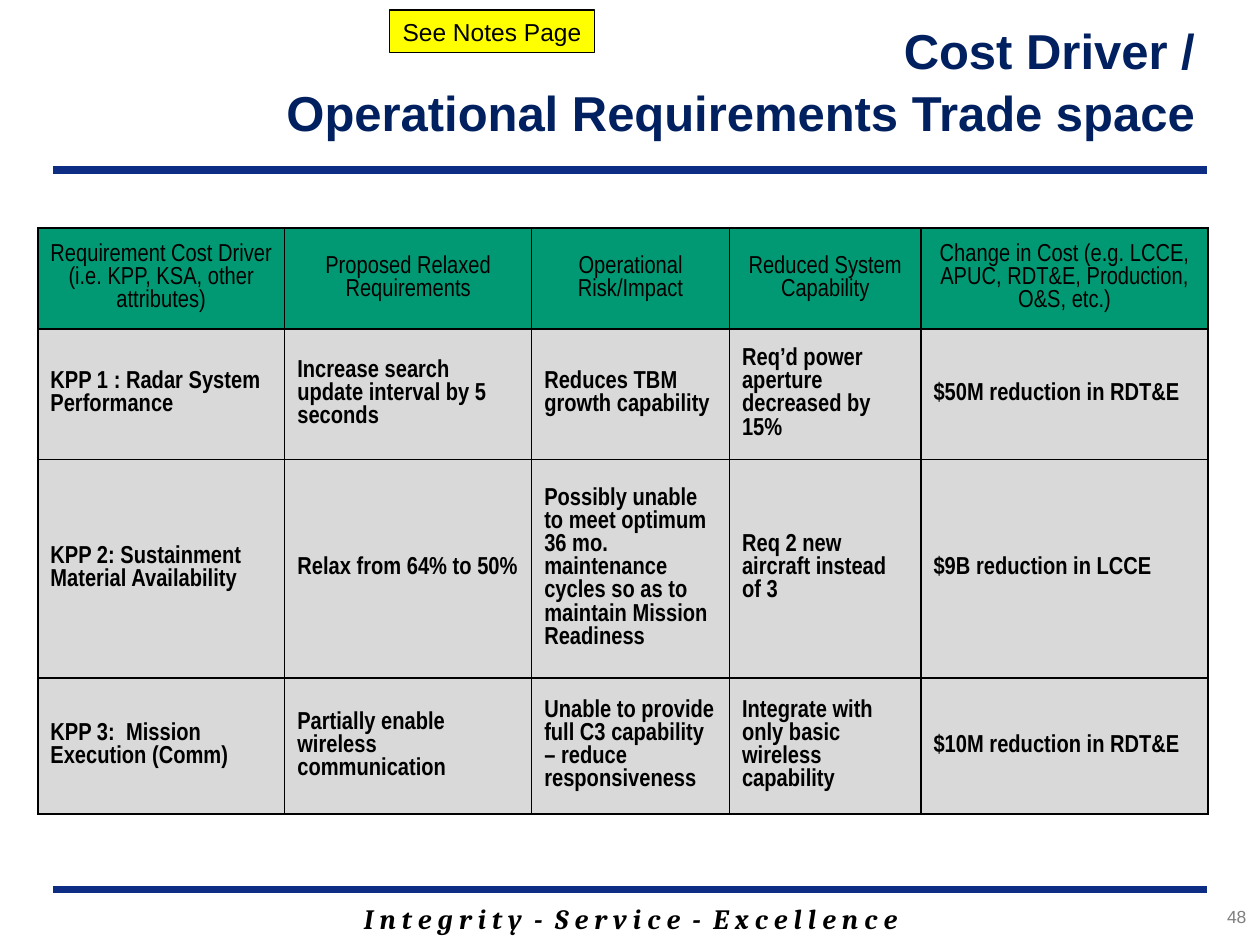
import pptx
import pptx.util
import pptx.dml.color
import pptx.enum.shapes
import pptx.enum.text
import pptx.oxml
import pptx.oxml.ns
from dataclasses import dataclass

Inches = pptx.util.Inches
Pt = pptx.util.Pt
Align = pptx.enum.text.PP_ALIGN
Anchor = pptx.enum.text.MSO_ANCHOR


@dataclass(frozen=True)
class Theme:
    black: str = "000000"
    title: str = "002060"
    rule: str = "0C2D83"
    header: str = "009973"
    body: str = "D9D9D9"
    note: str = "FFFF00"
    number: str = "7F7F7F"
    font: str = "Arial"
    table_font: str = "Arial Narrow"
    motto_font: str = "Cambria"
    title_size: int = 28
    motto_size: int = 16
    text_size: int = 14
    number_size: int = 10


THEME = Theme()

COLUMN_WIDTHS = [1.96, 1.96, 1.57, 1.52, 2.28]
ROW_HEIGHTS = [0.8, 1.03, 1.73, 1.08]
ROWS = [
    ["Requirement Cost Driver (i.e. KPP, KSA, other attributes)",
     "Proposed Relaxed Requirements",
     "Operational Risk/Impact",
     "Reduced System Capability",
     "Change in Cost (e.g. LCCE, APUC, RDT&E, Production, O&S, etc.)"],
    ["KPP 1 : Radar System Performance",
     "Increase search update interval by 5 seconds",
     "Reduces TBM growth capability",
     "Req’d power aperture decreased by 15%",
     "$50M reduction in RDT&E"],
    ["KPP 2: Sustainment Material Availability",
     "Relax from 64% to 50%",
     "Possibly unable to meet optimum 36 mo. maintenance cycles so as to maintain Mission Readiness",
     "Req 2 new aircraft instead of 3",
     "$9B reduction in LCCE"],
    ["KPP 3:  Mission Execution (Comm)",
     "Partially enable wireless communication",
     "Unable to provide full C3 capability – reduce responsiveness",
     "Integrate with only basic wireless capability",
     "$10M reduction in RDT&E"],
]


def rgb(color):
    return pptx.dml.color.RGBColor.from_string(color)


def fill_solid(target, color):
    target.fill.solid()
    target.fill.fore_color.rgb = rgb(color)


def write(frame, lines, size, color=THEME.black, font=THEME.font, align=Align.LEFT,
          bold=False, italic=False, spacing=None):
    frame.text = "\n".join(lines)
    for paragraph in frame.paragraphs:
        paragraph.alignment = align
        paragraph.line_spacing = spacing
        paragraph.font.name = font
        paragraph.font.size = Pt(size)
        paragraph.font.bold = bold
        paragraph.font.italic = italic
        paragraph.font.color.rgb = rgb(color)


def add_text(slide, left, top, width, height, lines, size, anchor=Anchor.TOP, **style):
    box = slide.shapes.add_textbox(Inches(left), Inches(top), Inches(width), Inches(height))
    box.text_frame.word_wrap = True
    box.text_frame.vertical_anchor = anchor
    write(box.text_frame, lines, size, **style)


def add_rule(slide, top):
    rule = slide.shapes.add_connector(
        pptx.enum.shapes.MSO_CONNECTOR.STRAIGHT,
        Inches(0.42), Inches(top), Inches(9.58), Inches(top))
    rule.line.color.rgb = rgb(THEME.rule)
    rule.line.width = Pt(4.5)
    pptx.oxml.ns.qn("a:effectLst")
    rule._element.spPr.append(pptx.oxml.parse_xml(
        f"<a:effectLst {pptx.oxml.ns.nsdecls('a')}/>"))


def add_borders(cell):
    properties = cell._tc.get_or_add_tcPr()
    for position, side in enumerate(("lnL", "lnR", "lnT", "lnB")):
        properties.insert(position, pptx.oxml.parse_xml(
            f"<a:{side} {pptx.oxml.ns.nsdecls('a')} w='{Pt(1)}'>"
            f"<a:solidFill><a:srgbClr val='{THEME.black}'/></a:solidFill></a:{side}>"))


def add_trade_table(slide):
    table = slide.shapes.add_table(
        len(ROWS), len(COLUMN_WIDTHS), Inches(0.3), Inches(1.81),
        Inches(sum(COLUMN_WIDTHS)), Inches(sum(ROW_HEIGHTS))).table
    table.horz_banding = False
    for column, width in zip(table.columns, COLUMN_WIDTHS):
        column.width = Inches(width)
    for row_index, (row, height) in enumerate(zip(table.rows, ROW_HEIGHTS)):
        row.height = Inches(height)
        is_header = row_index == 0
        for cell, text in zip(row.cells, ROWS[row_index]):
            cell.vertical_anchor = Anchor.MIDDLE
            fill_solid(cell, THEME.header if is_header else THEME.body)
            add_borders(cell)
            write(cell.text_frame, [text], THEME.text_size, font=THEME.table_font,
                  align=Align.CENTER if is_header else Align.LEFT, bold=not is_header)


def add_note(slide):
    note = slide.shapes.add_shape(
        pptx.enum.shapes.MSO_SHAPE.RECTANGLE,
        Inches(3.09), Inches(0.08), Inches(1.63), Inches(0.34))
    note.shadow.inherit = False
    fill_solid(note, THEME.note)
    note.line.color.rgb = rgb(THEME.black)
    note.line.width = Pt(0.75)
    note.text_frame.word_wrap = False
    note.text_frame.vertical_anchor = Anchor.MIDDLE
    write(note.text_frame, ["See Notes Page"], THEME.text_size, align=Align.CENTER)


def main():
    presentation = pptx.Presentation()
    presentation.slide_width = Inches(10)
    presentation.slide_height = Inches(7.5)
    slide = presentation.slides.add_slide(presentation.slide_layouts[6])

    add_text(slide, 1.42, 7.1, 7.17, 0.37,
             ["I n t e g r i t y  -  S e r v i c e  -  E x c e l l e n c e"],
             THEME.motto_size, anchor=Anchor.MIDDLE, font=THEME.motto_font,
             align=Align.CENTER, bold=True, italic=True)
    for top in (7.06, 1.35):
        add_rule(slide, top)
    add_trade_table(slide)
    add_text(slide, 0.36, 0.09, 9.22, 1.04,
             ["Cost Driver /", "Operational Requirements Trade space"],
             THEME.title_size, color=THEME.title, align=Align.RIGHT, bold=True, spacing=1.05)
    add_note(slide)
    add_text(slide, 8.74, 7.14, 1.25, 0.33, ["48"], THEME.number_size,
             color=THEME.number, align=Align.RIGHT)

    presentation.save("out.pptx")


if __name__ == "__main__":
    main()
